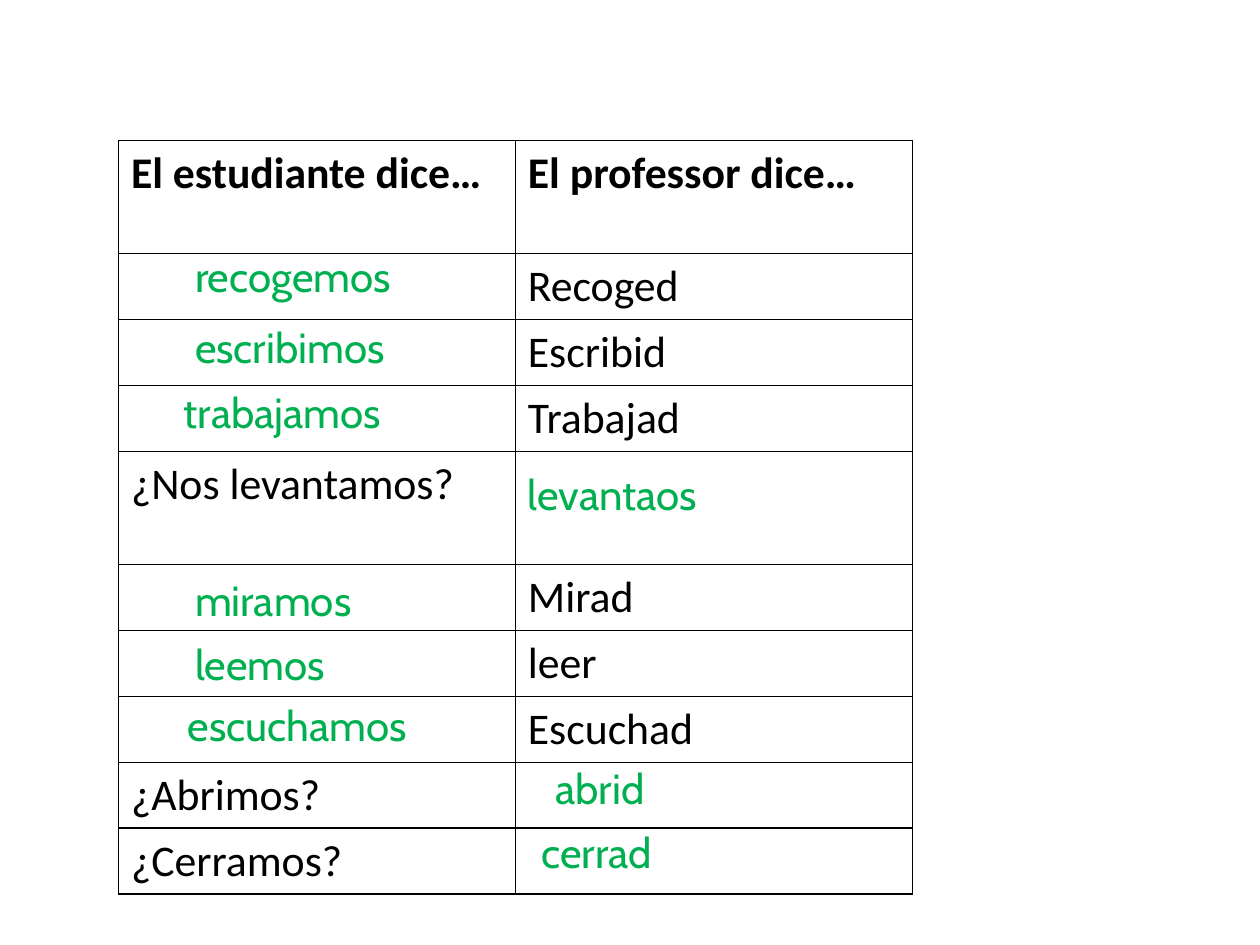
from lxml.etree import SubElement
from pptx import Presentation
from pptx.dml.color import RGBColor
from pptx.enum.text import MSO_AUTO_SIZE
from pptx.oxml.ns import qn
from pptx.util import Pt

BLACK = RGBColor(0x00, 0x00, 0x00)
GREEN = RGBColor(0x00, 0xB0, 0x50)

TABLE_FONT = {"name": "Calibri", "size": Pt(25), "bold": False}
HEADER_FONT = {**TABLE_FONT, "bold": True}
ANSWER_FONT = {"name": "Cabin", "size": Pt(24)}

TABLE_LEFT, TABLE_TOP = 67.7, 80.4
COLUMN_WIDTH = 226.8
ROW_HEIGHT, TALL_ROW_HEIGHT = 37.7, 64.5
TALL_ROWS = (0, 4)
ANSWER_HEIGHT = 36

ROWS = [
    ("El estudiante dice…", "El professor dice…"),
    ("", "Recoged"),
    ("", "Escribid"),
    ("", "Trabajad"),
    ("¿Nos levantamos?", ""),
    ("", "Mirad"),
    ("", "leer"),
    ("", "Escuchad"),
    ("¿Abrimos?", ""),
    ("¿Cerramos?", ""),
]

# Answer, left, top, width: placed by hand over the empty cells
ANSWERS = [
    ("recogemos", 104.4, 139.7, 141.1),
    ("escribimos", 104.4, 180, 139),
    ("trabajamos", 97.9, 217.4, 151.9),
    ("levantaos", 294.5, 264.2, 127.4),
    ("miramos", 104.4, 324.7, 121.7),
    ("leemos", 104.4, 361.4, 95.8),
    ("escuchamos", 100.1, 396, 154.8),
    ("abrid", 310.3, 432, 78.5),
    ("cerrad", 302.4, 468.7, 94.3),
]


def write(text_frame, text, font_format, color):
    paragraph = text_frame.paragraphs[0]
    font = paragraph.font
    if text:
        run = paragraph.add_run()
        run.text = text
        font = run.font
    for name, value in font_format.items():
        setattr(font, name, value)
    font.color.rgb = color


def outline(cell):
    """Draw a thin line on all four sides of a cell."""
    properties = cell._tc.get_or_add_tcPr()
    for position, side in enumerate(("a:lnL", "a:lnR", "a:lnT", "a:lnB")):
        line = SubElement(properties, qn(side), w=str(Pt(1)))
        fill = SubElement(line, qn("a:solidFill"))
        SubElement(fill, qn("a:srgbClr"), val=str(BLACK))
        properties.remove(line)
        properties.insert(position, line)


def add_verb_table(slide):
    heights = [TALL_ROW_HEIGHT if index in TALL_ROWS else ROW_HEIGHT
               for index in range(len(ROWS))]
    table = slide.shapes.add_table(
        len(ROWS), 2, Pt(TABLE_LEFT), Pt(TABLE_TOP),
        Pt(2 * COLUMN_WIDTH), Pt(sum(heights))).table
    table.horz_banding = False
    table.first_row = False
    for column in table.columns:
        column.width = Pt(COLUMN_WIDTH)
    for row_index, texts in enumerate(ROWS):
        table.rows[row_index].height = Pt(heights[row_index])
        font_format = TABLE_FONT if row_index else HEADER_FONT
        for column_index, text in enumerate(texts):
            cell = table.cell(row_index, column_index)
            cell.fill.background()
            outline(cell)
            write(cell.text_frame, text, font_format, BLACK)


def add_answer(slide, text, left, top, width):
    box = slide.shapes.add_textbox(
        Pt(left), Pt(top), Pt(width), Pt(ANSWER_HEIGHT))
    box.text_frame.word_wrap = False
    box.text_frame.auto_size = MSO_AUTO_SIZE.SHAPE_TO_FIT_TEXT
    write(box.text_frame, text, ANSWER_FONT, GREEN)


def main():
    presentation = Presentation()
    presentation.slide_width, presentation.slide_height = Pt(720), Pt(540)
    slide = presentation.slides.add_slide(presentation.slide_layouts[6])
    add_verb_table(slide)
    for answer in ANSWERS:
        add_answer(slide, *answer)
    presentation.save("out.pptx")


if __name__ == "__main__":
    main()
